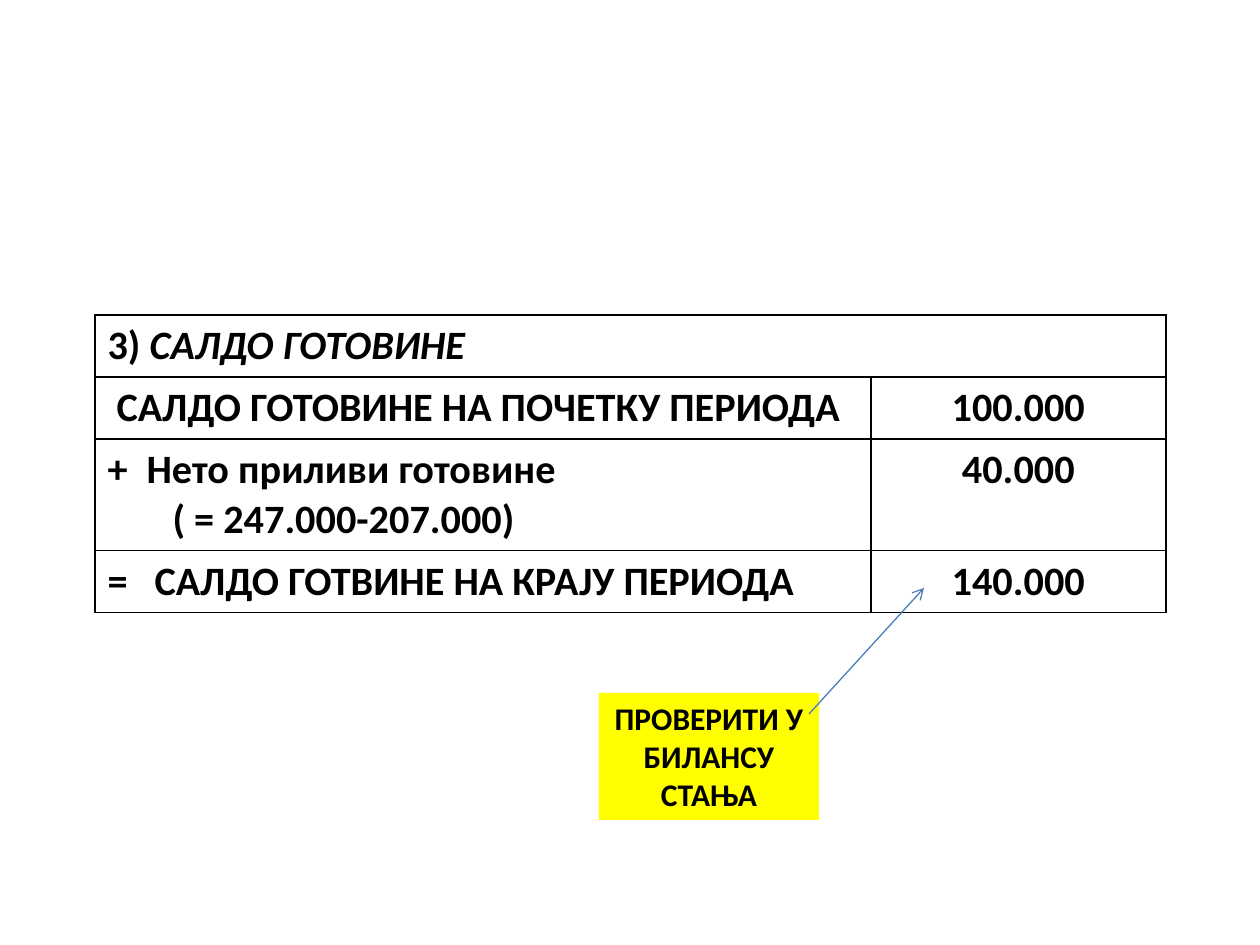
import pptx
import pptx.dml.color
import pptx.enum.shapes
import pptx.enum.text
import pptx.oxml
import pptx.oxml.ns
import pptx.util

PX = 914400 // 126
CENTER = pptx.enum.text.PP_ALIGN.CENTER


def color(value):
    return pptx.dml.color.RGBColor.from_string(value)


def add_span(para, text, size, italic=False):
    span = para.add_run()
    span.text = text
    span.font.name = "Calibri"
    span.font.size = pptx.util.Pt(size)
    span.font.bold = True
    span.font.italic = italic
    span.font.color.rgb = color("000000")


deck = pptx.Presentation()
deck.slide_width = pptx.util.Inches(10)
deck.slide_height = pptx.util.Inches(7.5)
page = deck.slides.add_slide(deck.slide_layouts[6])
namespace = pptx.oxml.ns.nsdecls("a")

# Cash balance table: each paragraph is (left margin, first-line indent, runs)
rows = [
    (62, [(0, 0, ["3) ", "САЛДО ГОТОВИНЕ"])], None),
    (62, [(9, 0, ["САЛДО ГОТОВИНЕ НА ПОЧЕТКУ ПЕРИОДА"])], "100.000"),
    (111, [(39, -39, ["+\tНето приливи готовине"]),
           (65, 0, ["( = 247.000-207.000)"])], "40.000"),
    (62, [(47, -47, ["=\tСАЛДО ГОТВИНЕ НА КРАЈУ ПЕРИОДА"])], "140.000"),
]
column_widths = [776, 295]
table = page.shapes.add_table(
    len(rows), len(column_widths), 95 * PX, 315 * PX,
    sum(column_widths) * PX, sum(row[0] for row in rows) * PX).table
for column, width in zip(table.columns, column_widths):
    column.width = width * PX

for index, (height, label, amount) in enumerate(rows):
    table.rows[index].height = height * PX
    label_cell, amount_cell = table.rows[index].cells
    for cell in (label_cell, amount_cell):
        cell.fill.solid()
        cell.fill.fore_color.rgb = color("FFFFFF")
        properties = cell._tc.get_or_add_tcPr()
        for position, side in enumerate(("lnL", "lnR", "lnT", "lnB")):
            properties.insert(position, pptx.oxml.parse_xml(
                f'<a:{side} {namespace} w="12700"><a:solidFill>'
                f'<a:srgbClr val="000000"/></a:solidFill></a:{side}>'))

    frame = label_cell.text_frame
    for number, (margin, indent, texts) in enumerate(label):
        para = frame.add_paragraph() if number else frame.paragraphs[0]
        para_properties = para._p.get_or_add_pPr()
        para_properties.set("marL", str(margin * PX))
        para_properties.set("indent", str(indent * PX))
        for order, text in enumerate(texts):
            add_span(para, text, 23, italic=order > 0)

    if amount:
        para = amount_cell.text_frame.paragraphs[0]
        para.alignment = CENTER
        add_span(para, amount, 23)

table.cell(0, 0).merge(table.cell(0, 1))

# Reminder to check the closing balance
box = page.shapes.add_shape(pptx.enum.shapes.MSO_SHAPE.RECTANGLE,
                            599 * PX, 693 * PX, 220 * PX, 127 * PX)
box.shadow.inherit = False
box.fill.solid()
box.fill.fore_color.rgb = color("FFFF00")
box.line.fill.background()
box.text_frame.word_wrap = True
box.text_frame.auto_size = pptx.enum.text.MSO_AUTO_SIZE.SHAPE_TO_FIT_TEXT
box.text_frame.vertical_anchor = pptx.enum.text.MSO_ANCHOR.TOP
para = box.text_frame.paragraphs[0]
para.alignment = CENTER
add_span(para, "ПРОВЕРИТИ У БИЛАНСУ СТАЊА", 18)

arrow = page.shapes.add_connector(pptx.enum.shapes.MSO_CONNECTOR.STRAIGHT,
                                  809 * PX, 714 * PX, 924 * PX, 588 * PX)
arrow.line.color.rgb = color("4B7EBC")
arrow.line.width = pptx.util.Pt(0.75)
arrow.line._get_or_add_ln().append(
    pptx.oxml.parse_xml(f'<a:tailEnd {namespace} type="arrow"/>'))
arrow._element.spPr.append(pptx.oxml.parse_xml(f"<a:effectLst {namespace}/>"))

deck.save("out.pptx")
